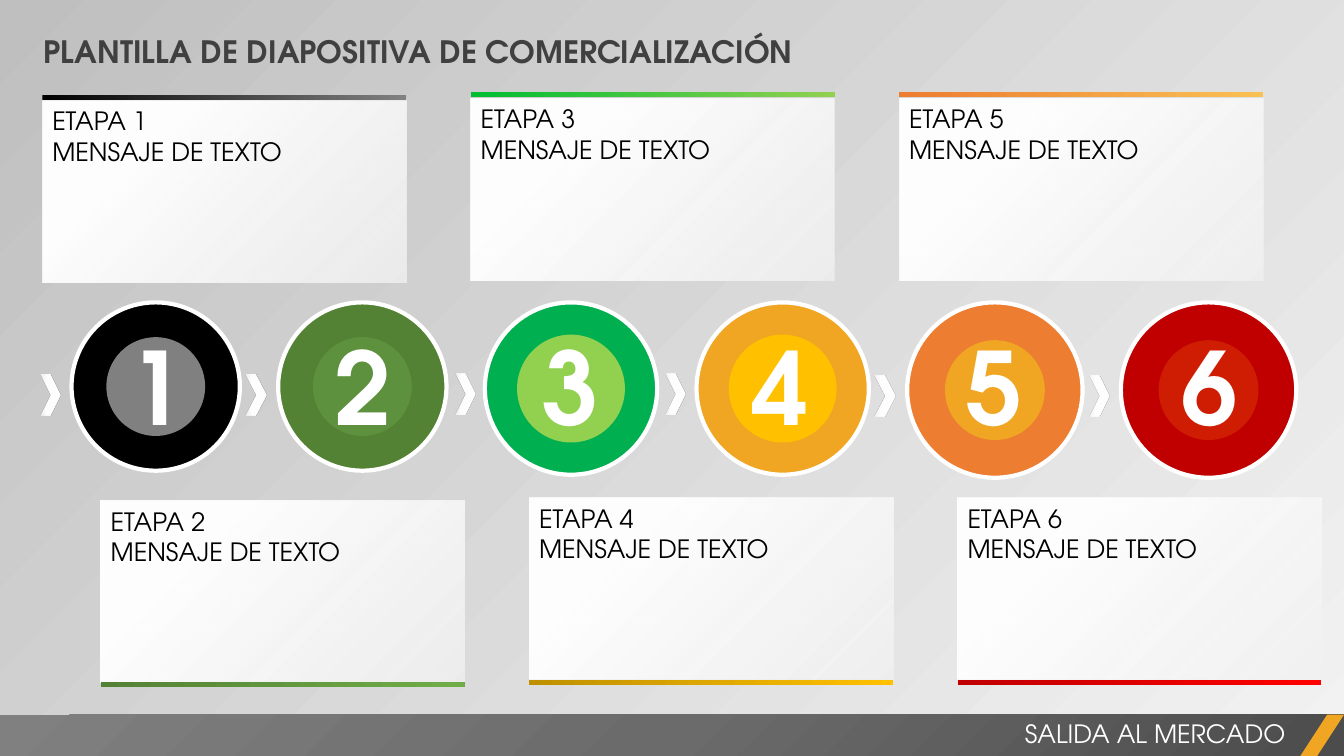
from lxml.etree import SubElement
from pptx import Presentation
from pptx.dml.color import RGBColor
from pptx.enum.shapes import MSO_SHAPE
from pptx.enum.text import MSO_ANCHOR, PP_ALIGN
from pptx.oxml.ns import qn
from pptx.util import Pt

FONT = "TeX Gyre Adventor"
COLORS = {
    "white": "FFFFFF", "black": "000000", "title": "404040",
    "pale": "F2F2F2", "silver": "BFBFBF", "accent": "F0A622",
    "footer_dark": "4C4C4C", "footer_mid": "6B6B6B", "gray": "808080",
    "green": "548235", "green_core": "5E913E", "green_end": "70AD47",
    "emerald": "00B050", "emerald_bar": "00BD32", "lime": "92D050",
    "gold": "FFC000", "gold_dark": "BF9000",
    "orange": "ED7D31", "orange_end": "F9C053",
    "red": "C00000", "red_core": "CE1D02", "red_end": "FF0000",
}
CARD_W, CARD_H, BAR_H = 259.92, 129.6, 3.6
CARD_LEFT, CARD_STEP, LOWER_SHIFT = 30.24, 306, 41.76
CIRCLE_TOP = 216

# ring, core, bar start, bar end, circle left, diameter, core diameter,
# digit left, chevron left, chevron top, card top, bar top
STAGES = [
    ("black", "gray", "black", "gray",
     51.12, 120.24, 70.56, 84.96, 28.8, 267.84, 72, 67.68),
    ("green", "green_core", "green", "green_end",
     198.72, 120.24, 70.56, 231.84, 175.68, 267.84, 357.84, 487.44),
    ("emerald", "lime", "emerald_bar", "lime",
     346.32, 123.12, 77.04, 380.16, 325.44, 267.12, 70.56, 65.52),
    ("accent", "gold", "gold_dark", "gold",
     497.52, 123.12, 77.04, 530.64, 475.2, 267.12, 355.68, 486),
    ("orange", "accent", "orange", "orange_end",
     648, 125.28, 71.28, 683.28, 624.96, 268.56, 70.56, 65.52),
    ("red", "red_core", "red", "red_end",
     800.64, 125.28, 71.28, 836.64, 778.32, 268.56, 355.68, 486),
]


def rgb(name):
    return RGBColor.from_string(COLORS[name])


def set_gradient(fill, element, stops, angle=0, corner=False):
    """Stops are (position %, colour, opacity %); corner radiates from bottom right."""
    fill.gradient()
    grad = element.find(".//" + qn("a:gradFill"))
    for child in list(grad):
        grad.remove(child)
    gs_list = SubElement(grad, qn("a:gsLst"))
    for position, color, opacity in stops:
        gs = SubElement(gs_list, qn("a:gs"), pos=str(position * 1000))
        clr = SubElement(gs, qn("a:srgbClr"), val=COLORS[color])
        if opacity < 100:
            SubElement(clr, qn("a:alpha"), val=str(opacity * 1000))
    if corner:
        path = SubElement(grad, qn("a:path"), path="circle")
        SubElement(path, qn("a:fillToRect"), l="100000", t="100000")
    else:
        SubElement(grad, qn("a:lin"), ang=str(angle * 60000), scaled="0")


def add_shape(s, kind, x, y, w, h, color=None, stops=None, outline=None, **gradient):
    sp = s.shapes.add_shape(kind, Pt(x), Pt(y), Pt(w), Pt(h))
    sp.shadow.inherit = False
    if stops:
        set_gradient(sp.fill, sp.element, stops, **gradient)
    else:
        sp.fill.solid()
        sp.fill.fore_color.rgb = rgb(color)
    if outline:
        sp.line.color.rgb = rgb(outline)
        sp.line.width = Pt(3)
    else:
        sp.line.fill.background()
    return sp


def write(sp, *lines, size=18, color="black", bold=False, align=PP_ALIGN.LEFT):
    tf = sp.text_frame
    tf.word_wrap = True
    tf.vertical_anchor = MSO_ANCHOR.TOP
    for i, line in enumerate(lines):
        p = tf.add_paragraph() if i else tf.paragraphs[0]
        p.alignment = align
        r = p.add_run()
        r.text = line
        r.font.name = FONT
        r.font.size = Pt(size)
        r.font.bold = bold
        r.font.color.rgb = rgb(color)


def add_text(s, x, y, w, h, text, **style):
    write(s.shapes.add_textbox(Pt(x), Pt(y), Pt(w), Pt(h)), text, **style)


def add_footer(s):
    add_shape(s, MSO_SHAPE.RECTANGLE, 0, 510.48, 960, 29.52, corner=True,
              stops=[(0, "footer_dark", 100), (50, "footer_mid", 100), (100, "gray", 100)])
    stripe = add_shape(s, MSO_SHAPE.PARALLELOGRAM, 928.8, 510.48, 31.2, 29.52, "accent")
    stripe.adjustments[0] = 0.65
    add_text(s, 378, 509.76, 547.2, 28.8, "SALIDA AL MERCADO",
             color="white", align=PP_ALIGN.RIGHT)


def add_card(s, number, top, bar_top, bar_start, bar_end):
    column, lower = divmod(number - 1, 2)
    left = CARD_LEFT + column * CARD_STEP + lower * LOWER_SHIFT
    card = add_shape(s, MSO_SHAPE.RECTANGLE, left, top, CARD_W, CARD_H, angle=225,
                     stops=[(0, "pale", 80), (74, "white", 100)])
    write(card, f"ETAPA {number}", "MENSAJE DE TEXTO")
    add_shape(s, MSO_SHAPE.RECTANGLE, left, bar_top, CARD_W, BAR_H,
              stops=[(0, bar_start, 100), (100, bar_end, 100)])


def add_circle(s, number, left, size, core_size, ring, core, digit_left):
    inset = (size - core_size) / 2
    add_shape(s, MSO_SHAPE.OVAL, left, CIRCLE_TOP, size, size, ring, outline="white")
    add_shape(s, MSO_SHAPE.OVAL, left + inset, CIRCLE_TOP + inset,
              core_size, core_size, core)
    add_text(s, digit_left, 228.24, 52 if number == 1 else 66.24, 94.32, str(number),
             size=72, color="white", bold=True)


def add_chevron(s, left, top):
    add_shape(s, MSO_SHAPE.CHEVRON, left, top, 14.4, 28.8,
              stops=[(0, "white", 62), (31, "white", 100)])


def main():
    prs = Presentation()
    prs.slide_width, prs.slide_height = Pt(960), Pt(540)
    s = prs.slides.add_slide(prs.slide_layouts[6])
    set_gradient(s.background.fill, s.element,
                 [(0, "pale", 40), (100, "silver", 100)], angle=225)
    add_text(s, 23.76, 20.16, 619.92, 33.84,
             "PLANTILLA DE DIAPOSITIVA DE COMERCIALIZACIÓN",
             size=22, color="title", bold=True)
    add_footer(s)
    for number, stage in enumerate(STAGES, 1):
        (ring, core, bar_start, bar_end, left, size, core_size,
         digit_left, chevron_left, chevron_top, card_top, bar_top) = stage
        add_card(s, number, card_top, bar_top, bar_start, bar_end)
        add_chevron(s, chevron_left, chevron_top)
        add_circle(s, number, left, size, core_size, ring, core, digit_left)
    prs.save("out.pptx")


if __name__ == "__main__":
    main()
